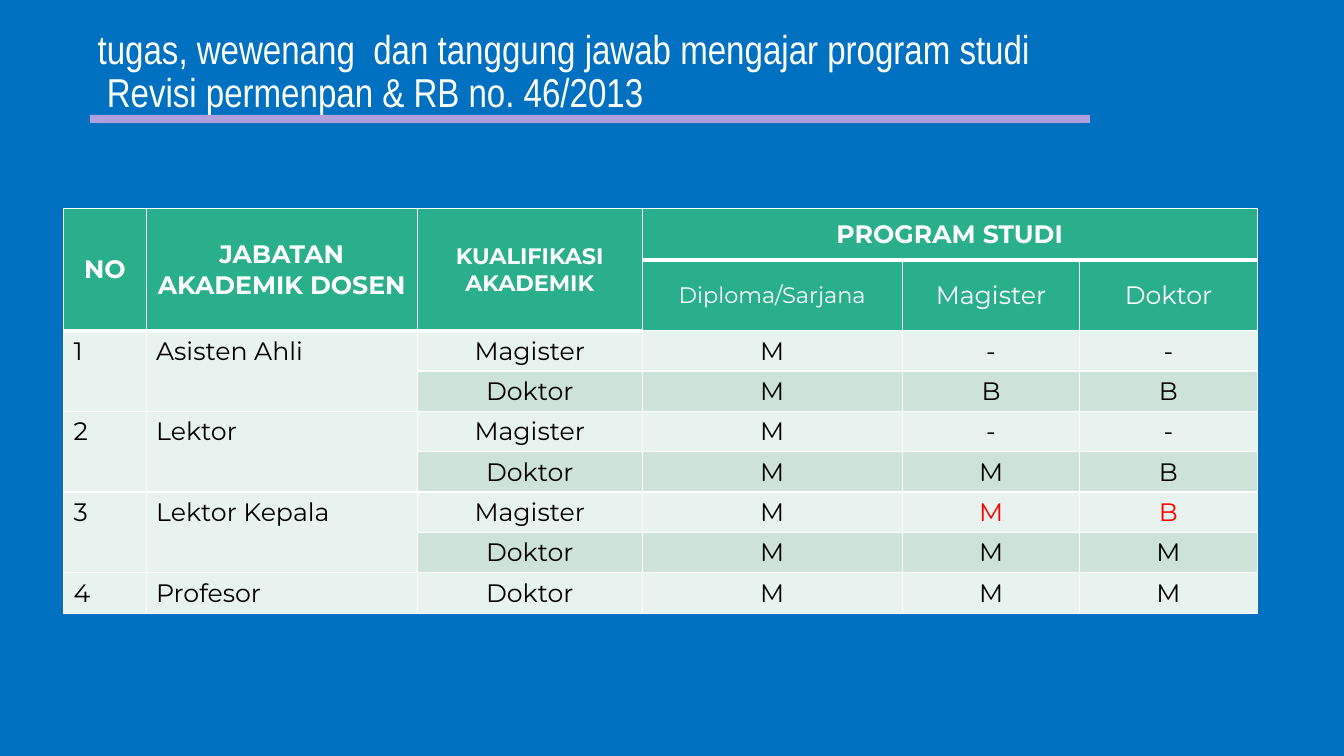
from dataclasses import dataclass

import pptx
import pptx.dml.color
import pptx.enum.shapes
import pptx.enum.text
import pptx.oxml
import pptx.oxml.ns
import pptx.util

PX = 9144  # 100 px to the inch
COLORS = {
    "background": "0070C0", "white": "FFFFFF", "black": "000000", "red": "FF0000",
    "accent": "B0A0DD", "header": "29AF8C", "light": "E8F2EE", "dark": "CDE3DA",
}
PP_ALIGN = pptx.enum.text.PP_ALIGN
MSO_ANCHOR = pptx.enum.text.MSO_ANCHOR


@dataclass
class Box:
    x: int
    y: int
    w: int
    h: int

    def emu(self) -> tuple[int, ...]:
        return tuple(v * PX for v in (self.x, self.y, self.w, self.h))


@dataclass
class Cell:
    row: int
    col: int
    text: str
    fill: str
    color: str = "black"
    size: int = 18
    bold: bool = False
    align: PP_ALIGN = PP_ALIGN.CENTER
    anchor: MSO_ANCHOR = MSO_ANCHOR.TOP
    rows: int = 1
    cols: int = 1


@dataclass
class Rank:
    title: str
    degrees: dict[str, str]  # degree -> one mark for each programme
    red: tuple[str, ...] = ()  # degrees whose last two marks are red


TITLE_BOX = Box(87, 0, 1212, 145)
RULE_BOX = Box(89, 114, 992, 8)
TABLE_BOX = Box(63, 207, 1184, 380)
COL_WIDTHS = [82, 269, 223, 258, 176, 176]
ROW_HEIGHTS = [51, 49] + [40] * 7
RANKS = [
    Rank("Asisten Ahli", {"Magister": "M--", "Doktor": "MBB"}),
    Rank("Lektor", {"Magister": "M--", "Doktor": "MMB"}),
    Rank("Lektor Kepala", {"Magister": "MMB", "Doktor": "MMM"}, ("Magister",)),
    Rank("Profesor", {"Doktor": "MMM"}),
]


def rgb(name: str) -> pptx.dml.color.RGBColor:
    return pptx.dml.color.RGBColor.from_string(COLORS[name])


def write(tf, text: str, color: str, **formats) -> None:
    p = tf.paragraphs[0]
    p.text = text
    for r in p.runs:
        r.font.color.rgb = rgb(color)
        for name, value in formats.items():
            setattr(r.font, name, value)


def header_cells() -> list[Cell]:
    style = dict(fill="header", color="white", anchor=MSO_ANCHOR.MIDDLE)
    return [
        Cell(0, 0, "NO", bold=True, rows=2, **style),
        Cell(0, 1, "JABATAN AKADEMIK DOSEN", bold=True, rows=2, **style),
        Cell(0, 2, "KUALIFIKASI AKADEMIK", size=16, bold=True, rows=2, **style),
        Cell(0, 3, "PROGRAM STUDI", bold=True, cols=3, **style),
        Cell(1, 3, "Diploma/Sarjana", size=16, **style),
        Cell(1, 4, "Magister", **style),
        Cell(1, 5, "Doktor", **style),
    ]


def rank_cells() -> list[Cell]:
    cells = []
    row = 2
    for number, rank in enumerate(RANKS, 1):
        for col, text in enumerate((str(number), rank.title)):
            cells.append(Cell(row, col, text, "light", align=PP_ALIGN.LEFT,
                              rows=len(rank.degrees)))
        for degree, marks in rank.degrees.items():
            fill = "dark" if row % 2 else "light"
            cells.append(Cell(row, 2, degree, fill))
            for col, mark in enumerate(marks, 3):
                color = "red" if degree in rank.red and col > 3 else "black"
                cells.append(Cell(row, col, mark, fill, color))
            row += 1
    return cells


def edge_width(edge: int, col: int) -> int:
    """Width in points of the horizontal border below row number `edge`."""
    return 3 if edge == 1 or (edge == 2 and col < 3) else 1


def add_borders(tc, row: int, col: int) -> None:
    tcPr = tc._tc.get_or_add_tcPr()
    widths = {"L": 1, "R": 1, "T": edge_width(row, col), "B": edge_width(row + 1, col)}
    for side, width in widths.items():
        tcPr.append(pptx.oxml.parse_xml(
            f'<a:ln{side} {pptx.oxml.ns.nsdecls("a")} w="{width * 12700}">'
            f'<a:solidFill><a:srgbClr val="{COLORS["white"]}"/></a:solidFill>'
            f'</a:ln{side}>'))


def fill_cell(table, cell: Cell) -> None:
    tc = table.cell(cell.row, cell.col)
    if cell.rows * cell.cols > 1:
        tc.merge(table.cell(cell.row + cell.rows - 1, cell.col + cell.cols - 1))
    tc.fill.solid()
    tc.fill.fore_color.rgb = rgb(cell.fill)
    tc.vertical_anchor = cell.anchor
    write(tc.text_frame, cell.text, cell.color, name="Montserrat",
          size=pptx.util.Pt(cell.size), bold=cell.bold)
    tc.text_frame.paragraphs[0].alignment = cell.align


def add_title(s) -> None:
    tf = s.shapes.add_textbox(*TITLE_BOX.emu()).text_frame
    for name, value in {"word_wrap": True, "vertical_anchor": MSO_ANCHOR.MIDDLE}.items():
        setattr(tf, name, value)
    write(tf, "tugas, wewenang  dan tanggung jawab mengajar program studi\v"
              " Revisi permenpan & RB no. 46/2013",
          "white", name="Arial Narrow", size=pptx.util.Pt(28.8))
    tf.paragraphs[0].line_spacing = 0.9


def add_rule(s) -> None:
    sp = s.shapes.add_shape(pptx.enum.shapes.MSO_SHAPE.RECTANGLE, *RULE_BOX.emu())
    sp.shadow.inherit = False
    sp.fill.solid()
    sp.fill.fore_color.rgb = rgb("accent")
    sp.line.fill.background()


def add_duties_table(s) -> None:
    table = s.shapes.add_table(len(ROW_HEIGHTS), len(COL_WIDTHS), *TABLE_BOX.emu()).table
    table.first_row = table.horz_banding = False
    for col, width in enumerate(COL_WIDTHS):
        table.columns[col].width = width * PX
    for row, height in enumerate(ROW_HEIGHTS):
        table.rows[row].height = height * PX
        for col in range(len(COL_WIDTHS)):
            add_borders(table.cell(row, col), row, col)
    for cell in header_cells() + rank_cells():
        fill_cell(table, cell)


def main() -> None:
    prs = pptx.Presentation()
    prs.slide_width, prs.slide_height = 1333 * PX, 750 * PX
    s = prs.slides.add_slide(prs.slide_layouts[6])
    s.background.fill.solid()
    s.background.fill.fore_color.rgb = rgb("background")
    add_title(s)
    add_rule(s)
    add_duties_table(s)
    prs.save("out.pptx")


if __name__ == "__main__":
    main()
